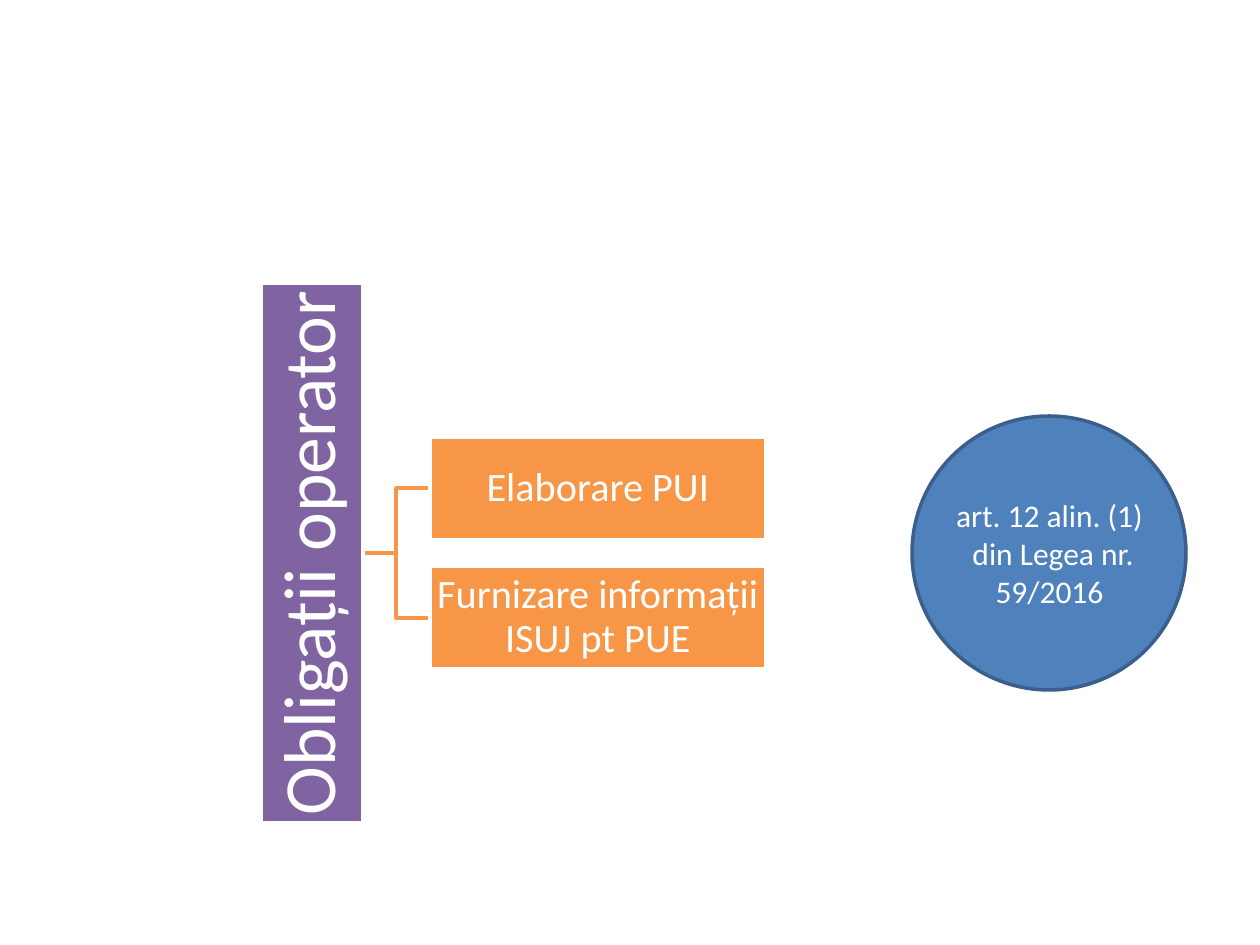
"""Build the slide on the operator's obligations."""
from dataclasses import dataclass

from lxml import etree
from pptx import Presentation
from pptx.dml.color import RGBColor
from pptx.enum.shapes import MSO_SHAPE
from pptx.enum.text import MSO_ANCHOR, PP_ALIGN
from pptx.oxml import parse_xml
from pptx.oxml.ns import nsdecls, qn
from pptx.util import Emu, Pt

RECTANGLE = MSO_SHAPE.RECTANGLE
OVAL = MSO_SHAPE.OVAL
MIDDLE = MSO_ANCHOR.MIDDLE
TOP = MSO_ANCHOR.TOP
CENTER = PP_ALIGN.CENTER
SCALE = 914400 / 126
BLANK_LAYOUT = 6


@dataclass(frozen=True)
class Theme:
    """Hold the colours, font and sizes of the slide."""
    white: str = "FFFFFF"
    purple: str = "8064A2"
    orange: str = "F79646"
    blue: str = "4F81BD"
    dark_blue: str = "3A5F8C"
    font: str = "Calibri"
    root_size: int = 42
    branch_size: int = 23
    note_size: int = 18
    line_width: int = 2


THEME = Theme()


def px(length):
    """Turn pixels into EMU."""
    return Emu(round(length * SCALE))


def style_line(shape, color):
    """Give a shape its outline and no shadow."""
    shape.shadow.inherit = False
    shape.line.color.rgb = RGBColor.from_string(color)
    shape.line.width = Pt(THEME.line_width)


def add_text_shadow(run):
    """Put a soft shadow behind the letters of a run."""
    effects = parse_xml(
        f'<a:effectLst {nsdecls("a")}>'
        '<a:outerShdw blurRad="38100" dist="38100" dir="2700000" algn="tl">'
        '<a:srgbClr val="000000"><a:alpha val="43000"/></a:srgbClr>'
        '</a:outerShdw></a:effectLst>')
    properties = run.font._element
    properties.find(qn("a:solidFill")).addnext(effects)


def write_text(shape, lines, *, size, margin, spacing=None, anchor=MIDDLE,
               wrap=True, shadow=False):
    """Write centred white paragraphs into a shape."""
    frame = shape.text_frame
    frame.word_wrap = wrap
    frame.vertical_anchor = anchor
    frame.margin_left = frame.margin_right = px(margin[0])
    frame.margin_top = frame.margin_bottom = px(margin[1])
    for index, line in enumerate(lines):
        paragraph = frame.add_paragraph() if index else frame.paragraphs[0]
        paragraph.alignment = CENTER
        if spacing:
            paragraph.line_spacing = spacing
        run = paragraph.add_run()
        run.text = line
        run.font.name = THEME.font
        run.font.size = Pt(size)
        run.font.color.rgb = RGBColor.from_string(THEME.white)
        if shadow:
            add_text_shadow(run)


def add_filled_shape(slide, kind, box, fill, line):
    """Add a preset shape with a solid fill."""
    shape = slide.shapes.add_shape(kind, *map(px, box))
    shape.fill.solid()
    shape.fill.fore_color.rgb = RGBColor.from_string(fill)
    style_line(shape, line)
    return shape


def add_elbow(slide, start, end):
    """Draw an open elbow line that turns halfway."""
    middle = (start[0] + end[0]) / 2
    builder = slide.shapes.build_freeform(*start, scale=SCALE)
    builder.add_line_segments(
        [(middle, start[1]), (middle, end[1]), end], close=False)
    elbow = builder.convert_to_shape()
    elbow.fill.background()
    style_line(elbow, THEME.orange)


def add_hierarchy(slide, root, branches):
    """Draw the upright root box and its branches."""
    length, height, step = 540, 102, 129
    center_x, center_y = 312, 553
    branch_left, branch_width = 430, 336
    first_y = center_y - step * (len(branches) - 1) / 2
    centers = [first_y + index * step for index in range(len(branches))]
    for branch_y in centers:
        add_elbow(slide, (center_x + height / 2, center_y),
                  (branch_left, branch_y))

    root_box = (center_x - length / 2, center_y - height / 2, length, height)
    shape = add_filled_shape(slide, RECTANGLE, root_box, THEME.purple,
                             THEME.white)
    shape.rotation = 270
    write_text(shape, [root], size=THEME.root_size, margin=(4, 4),
               spacing=0.9, wrap=False)
    for branch, branch_y in zip(branches, centers):
        box = (branch_left, branch_y - height / 2, branch_width, height)
        shape = add_filled_shape(slide, RECTANGLE, box, THEME.orange,
                                 THEME.white)
        write_text(shape, [branch], size=THEME.branch_size, margin=(2, 2),
                   spacing=0.9)


def add_legal_note(slide, lines):
    """Draw the circle that names the legal basis."""
    add_filled_shape(slide, OVAL, (912, 416, 274, 274), THEME.blue,
                     THEME.dark_blue)
    text_box = slide.shapes.add_textbox(*map(px, (901, 490, 297, 127)))
    write_text(text_box, lines, size=THEME.note_size, margin=(13, 6),
               anchor=TOP, shadow=True)


def main():
    """Build and save the presentation."""
    presentation = Presentation()
    presentation.slide_width = px(1260)
    presentation.slide_height = px(945)
    slide = presentation.slides.add_slide(
        presentation.slide_layouts[BLANK_LAYOUT])
    add_hierarchy(slide, "Obligații operator",
                  ["Elaborare PUI", "Furnizare informații ISUJ pt PUE"])
    add_legal_note(slide, ["art. 12 alin. (1)", " din Legea nr. 59/2016"])
    presentation.save("out.pptx")


if __name__ == "__main__":
    main()
